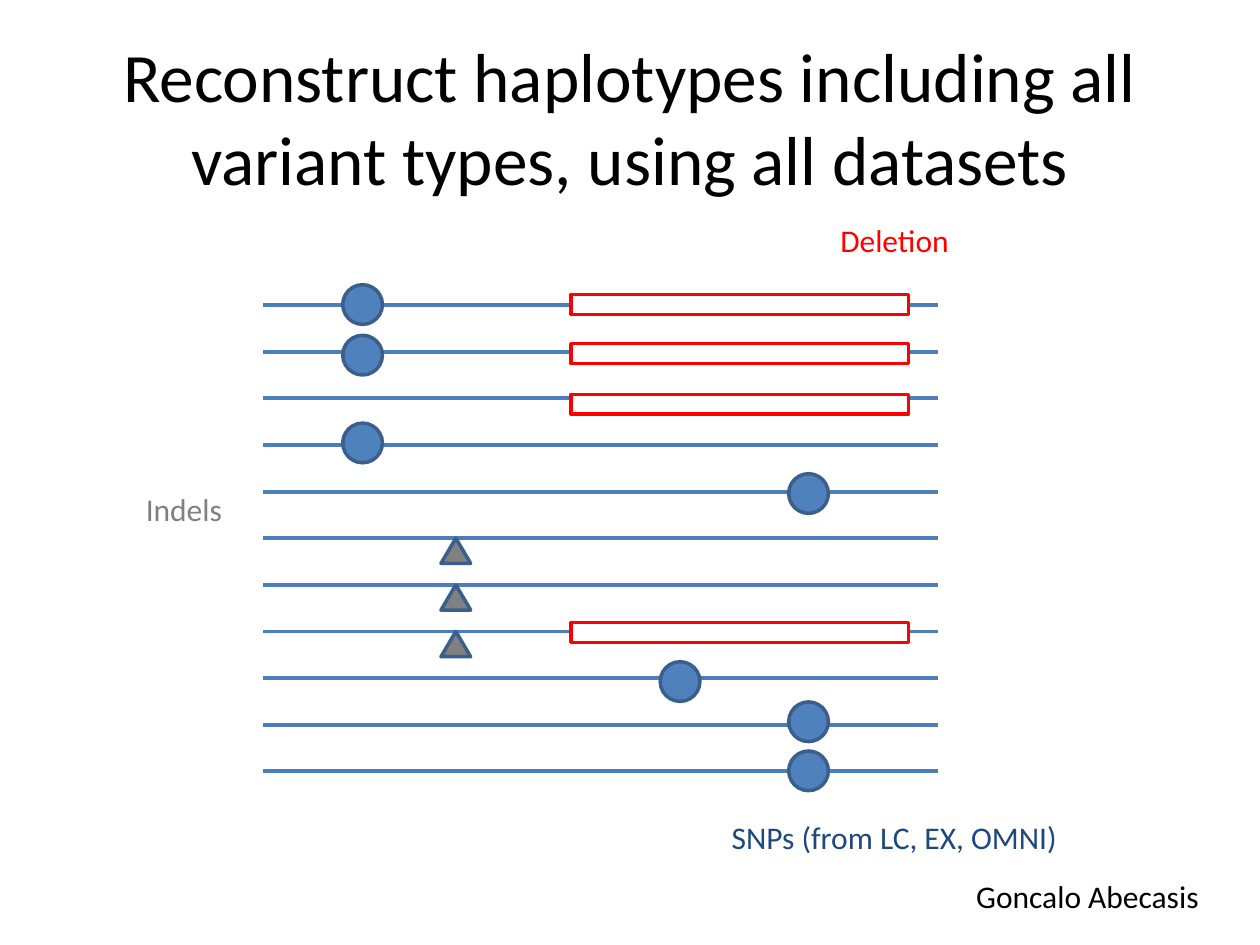
import pptx
import pptx.util
import pptx.dml.color
import pptx.enum.shapes
import pptx.enum.text
import pptx.oxml
import pptx.oxml.ns

Cm, Pt = pptx.util.Cm, pptx.util.Pt
SHAPE = pptx.enum.shapes.MSO_SHAPE

LINE_LEFT, LINE_RIGHT = 5.31, 18.9
FIRST_ROW, ROW_STEP, ROWS = 6.15, 0.94, 11
SNPS = [(6.91, 5.74), (6.91, 6.76), (6.91, 8.53), (15.9, 9.55),
        (15.9, 14.15), (15.9, 15.14), (13.31, 13.34)]
INDEL_ROWS = [5, 6, 7]
DELETION_TOPS = [5.94, 6.93, 7.95, 12.55]
LABELS = [
    ("Deletion", 16.69, 4.34, 2.74, "FF0000"),
    ("SNPs (from LC, EX, OMNI)", 14.5, 16.36, 7.14, "1F497D"),
    ("Indels", 2.69, 9.75, 2.06, "808080"),
    ("Goncalo Abecasis", 19.43, 17.55, 5.05, "000000"),
]


def rgb(value):
    """Return the colour for a hex string."""
    return pptx.dml.color.RGBColor.from_string(value)


def style_font(p, size, color):
    """Set the font of a paragraph."""
    p.font.name = "Calibri"
    p.font.size = Pt(size)
    p.font.color.rgb = rgb(color)


def row_y(row):
    """Return the height of a haplotype line in centimetres."""
    return FIRST_ROW + row * ROW_STEP


def set_title(s, text):
    """Place and format the slide title."""
    title = s.shapes.title
    title.left, title.top = Cm(1.27), Cm(0.76)
    title.width, title.height = Cm(22.86), Cm(3.18)
    tf = title.text_frame
    tf.text = text
    tf.word_wrap = True
    tf.auto_size = pptx.enum.text.MSO_AUTO_SIZE.NONE
    tf.vertical_anchor = pptx.enum.text.MSO_ANCHOR.MIDDLE
    p = tf.paragraphs[0]
    p.alignment = pptx.enum.text.PP_ALIGN.CENTER
    style_font(p, 39.6, "000000")


def add_haplotype(s, y):
    """Draw one horizontal haplotype line."""
    line = s.shapes.add_connector(
        pptx.enum.shapes.MSO_CONNECTOR.STRAIGHT,
        Cm(LINE_LEFT), Cm(y), Cm(LINE_RIGHT), Cm(y))
    line.line.color.rgb = rgb("4B7EBC")
    line.line.width = Pt(2.25)
    sp_pr = line._element.find(pptx.oxml.ns.qn("p:spPr"))
    sp_pr.append(pptx.oxml.parse_xml(
        f"<a:effectLst {pptx.oxml.ns.nsdecls('a')}/>"))


def add_variant(s, kind, x, y, w, h, fill, outline):
    """Draw one variant marker."""
    sp = s.shapes.add_shape(kind, Cm(x), Cm(y), Cm(w), Cm(h))
    sp.shadow.inherit = False
    sp.fill.solid()
    sp.fill.fore_color.rgb = rgb(fill)
    sp.line.color.rgb = rgb(outline)
    sp.line.width = Pt(2)


def add_label(s, text, x, y, w, color):
    """Add a one-line text label."""
    tf = s.shapes.add_textbox(Cm(x), Cm(y), Cm(w), Cm(1.03)).text_frame
    tf.text = text
    tf.word_wrap = False
    tf.auto_size = pptx.enum.text.MSO_AUTO_SIZE.SHAPE_TO_FIT_TEXT
    style_font(tf.paragraphs[0], 18, color)


def main():
    """Build the slide and save it."""
    prs = pptx.Presentation()
    prs.slide_width, prs.slide_height = Cm(25.4), Cm(19.05)
    s = prs.slides.add_slide(prs.slide_layouts[5])
    set_title(s, "Reconstruct haplotypes including all variant types, "
                 "using all datasets")
    for row in range(ROWS):
        add_haplotype(s, row_y(row))
    for x, y in SNPS:
        add_variant(s, SHAPE.OVAL, x, y, 0.8, 0.8, "4F81BD", "3A5F8C")
    for row in INDEL_ROWS:
        add_variant(s, SHAPE.ISOSCELES_TRIANGLE, 8.89, row_y(row),
                    0.6, 0.51, "808080", "3A5F8C")
    for y in DELETION_TOPS:
        add_variant(s, SHAPE.RECTANGLE, 11.51, y, 6.81, 0.4,
                    "FFFFFF", "FF0000")
    for label in LABELS:
        add_label(s, *label)
    prs.save("out.pptx")


if __name__ == "__main__":
    main()
